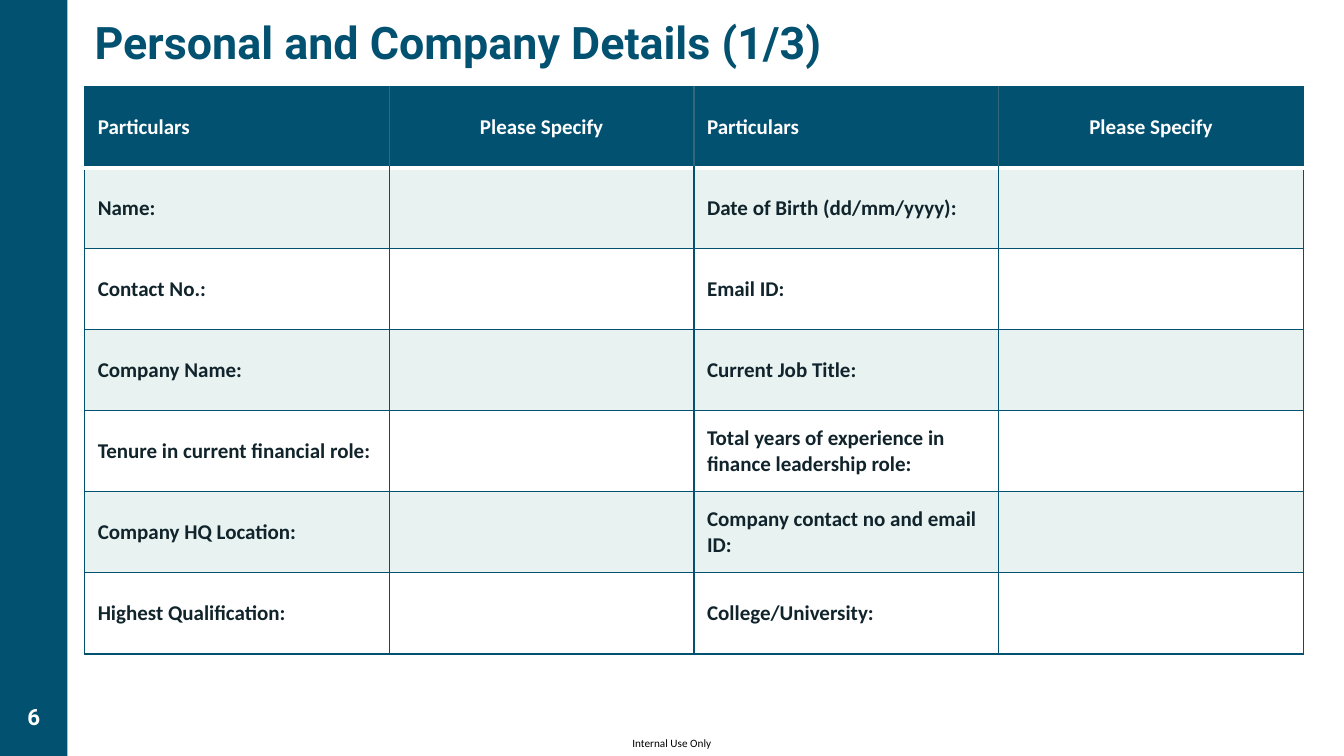
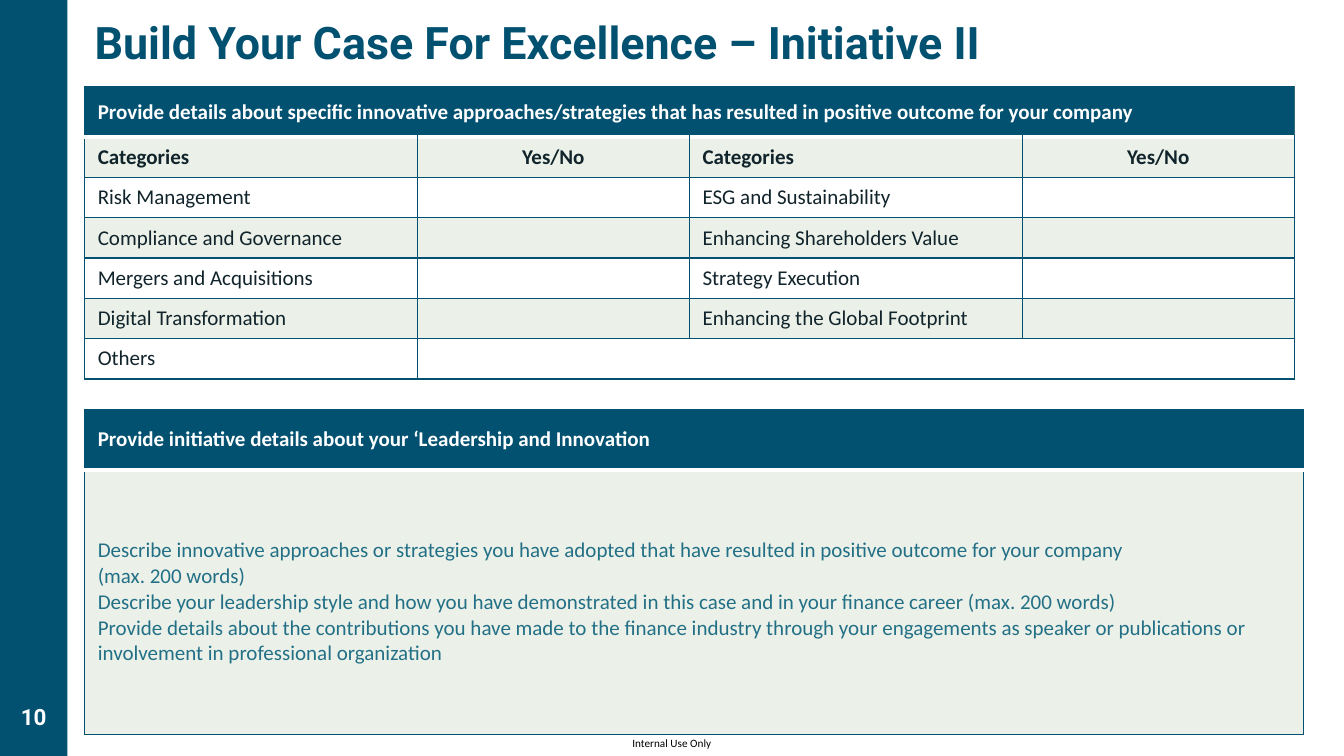
from lxml.etree import SubElement
from pptx import Presentation
from pptx.dml.color import RGBColor
from pptx.enum.shapes import MSO_SHAPE
from pptx.enum.text import MSO_ANCHOR, PP_ALIGN
from pptx.oxml.ns import qn
from pptx.util import Pt

PX = 9144  # 100 px to the inch
COLORS = {
    "navy": "025171", "white": "FFFFFF", "black": "000000", "ink": "11242B",
    "prompt": "237086", "divider": "31687C", "mint": "E7F2F1", "sage": "EBF1E9",
}
LEFT, TABLE_TOP, FULL_WIDTH = 84, 86, 1209

DETAILS = {
    "top": TABLE_TOP, "columns": [FULL_WIDTH / 4] * 4, "heights": [563 / 7] * 7,
    "band": "mint", "ink": "ink", "bold_rows": range(7), "merges": [],
    "rows": [
        ["Particulars", "Please Specify", "Particulars", "Please Specify"],
        ["Name:", "", "Date of Birth (dd/mm/yyyy):", ""],
        ["Contact No.:", "", "Email ID:", ""],
        ["Company Name:", "", "Current Job Title:", ""],
        ["Tenure in current financial role:", "",
         "Total years of experience in finance leadership role:", ""],
        ["Company HQ Location:", "", "Company contact no and email ID:", ""],
        ["Highest Qualification:", "", "College/University:", ""],
    ],
}
APPROACHES = {
    "top": TABLE_TOP, "columns": [330, 270] * 2, "heights": [50] + [40] * 6,
    "band": "sage", "ink": "ink", "bold_rows": range(2),
    "merges": [(0, 0, 3), (6, 1, 3)],  # row, first column, last column
    "rows": [
        ["Provide details about specific innovative approaches/strategies that has "
         "resulted in positive outcome for your company", "", "", ""],
        ["Categories", "Yes/No", "Categories", "Yes/No"],
        ["Risk Management", "", "ESG and Sustainability", ""],
        ["Compliance and Governance", "", "Enhancing Shareholders Value", ""],
        ["Mergers and Acquisitions", "", "Strategy Execution", ""],
        ["Digital Transformation", "", "Enhancing the Global Footprint", ""],
        ["Others", "", "", ""],
    ],
}
LEADERSHIP = {
    "top": 406, "columns": [FULL_WIDTH], "heights": [60, 263],
    "band": "sage", "ink": "prompt", "bold_rows": range(1), "merges": [],
    "rows": [
        ["Provide initiative details about your ‘Leadership and Innovation"],
        ["Describe innovative approaches or strategies you have adopted that have "
         "resulted in positive outcome for your company\n"
         "(max. 200 words)\n"
         "Describe your leadership style and how you have demonstrated in this case "
         "and in your finance career (max. 200 words)\n"
         "Provide details about the contributions you have made to the finance industry "
         "through your engagements as speaker or publications or involvement in "
         "professional organization"],
    ],
}
PAGES = [
    ("6", "Personal and Company Details (1/3)", [DETAILS]),
    ("10", "Build Your Case For Excellence – Initiative II", [APPROACHES, LEADERSHIP]),
]


def px(*lengths):
    return [round(length * PX) for length in lengths]


def rgb(name):
    return RGBColor.from_string(COLORS[name])


def add_span(para, text, size, font, color, bold):
    span = para.add_run()
    span.text = text
    span.font.size = Pt(size)
    span.font.name = font
    span.font.bold = bold
    span.font.color.rgb = rgb(color)


def add_text(page, area, text, size, font, color, bold=True, align=PP_ALIGN.LEFT,
             anchor=MSO_ANCHOR.TOP, insets=(10, 5)):
    frame = page.shapes.add_textbox(*px(*area)).text_frame
    frame.word_wrap = True
    frame.vertical_anchor = anchor
    frame.margin_left = frame.margin_right = px(insets[0])[0]
    frame.margin_top = frame.margin_bottom = px(insets[1])[0]
    para = frame.paragraphs[0]
    para.alignment = align
    add_span(para, text, size, font, color, bold)


def add_frame(page, number, title):
    """Add the parts every page shares: footer, side band, page number and title."""
    add_text(page, (614, 725, 105, 25), "Internal Use Only", 8, "Calibri", "black",
             False, PP_ALIGN.CENTER, MSO_ANCHOR.MIDDLE, (0, 0))
    band = page.shapes.add_shape(MSO_SHAPE.RECTANGLE, *px(0, 0, 67, 750))
    band.shadow.inherit = False
    band.fill.solid()
    band.fill.fore_color.rgb = rgb("navy")
    band.line.fill.background()
    add_text(page, (0, 693, 67, 37), number, 16, "Roboto", "white",
             align=PP_ALIGN.CENTER)
    add_text(page, (LEFT, 10, 1150, 83), title, 32, "Roboto", "navy")


def set_borders(cell, row, column, last_column):
    navy, rule = ("navy", 1), ("white", 3)
    inner = ("divider", 1) if row == 0 else navy
    sides = {
        "lnL": inner if column > 0 else navy,
        "lnR": inner if column < last_column else navy,
        "lnT": rule if row == 1 else navy,
        "lnB": rule if row == 0 else navy,
    }
    properties = cell._tc.get_or_add_tcPr()
    for side, (color, width) in sides.items():
        line = SubElement(properties, qn(f"a:{side}"), w=str(Pt(width)))
        fill = SubElement(line, qn("a:solidFill"))
        SubElement(fill, qn("a:srgbClr"), val=COLORS[color])


def fill_cell(cell, text, color, bold, align):
    cell.vertical_anchor = MSO_ANCHOR.MIDDLE
    cell.margin_left = cell.margin_right = px(13)[0]
    cell.margin_top = cell.margin_bottom = px(7)[0]
    for index, line in enumerate(text.split("\n")):
        frame = cell.text_frame
        para = frame.add_paragraph() if index else frame.paragraphs[0]
        para.alignment = align
        if line:
            add_span(para, line, 15, "Calibri", color, bold)
        else:
            SubElement(para._p, qn("a:endParaRPr"), sz="1500")


def add_grid(page, grid):
    rows, columns, heights = grid["rows"], grid["columns"], grid["heights"]
    area = px(LEFT, grid["top"], sum(columns), sum(heights))
    table = page.shapes.add_table(len(rows), len(columns), *area).table
    table.horz_banding = False
    for column, width in zip(table.columns, px(*columns)):
        column.width = width
    for row, height in zip(table.rows, px(*heights)):
        row.height = height
    for r, texts in enumerate(rows):
        for c, text in enumerate(texts):
            cell = table.cell(r, c)
            set_borders(cell, r, c, len(columns) - 1)
            cell.fill.solid()
            band = grid["band"] if r % 2 else "white"
            cell.fill.fore_color.rgb = rgb(band if r else "navy")
            fill_cell(cell, text, grid["ink"] if r else "white", r in grid["bold_rows"],
                      PP_ALIGN.CENTER if c % 2 else PP_ALIGN.LEFT)
    for r, first, last in grid["merges"]:
        table.cell(r, first).merge(table.cell(r, last))


def main():
    deck = Presentation()
    deck.slide_width, deck.slide_height = px(1333.33, 750)
    for number, title, grids in PAGES:
        page = deck.slides.add_slide(deck.slide_layouts[6])
        add_frame(page, number, title)
        for grid in grids:
            add_grid(page, grid)
    deck.save("out.pptx")


if __name__ == "__main__":
    main()
